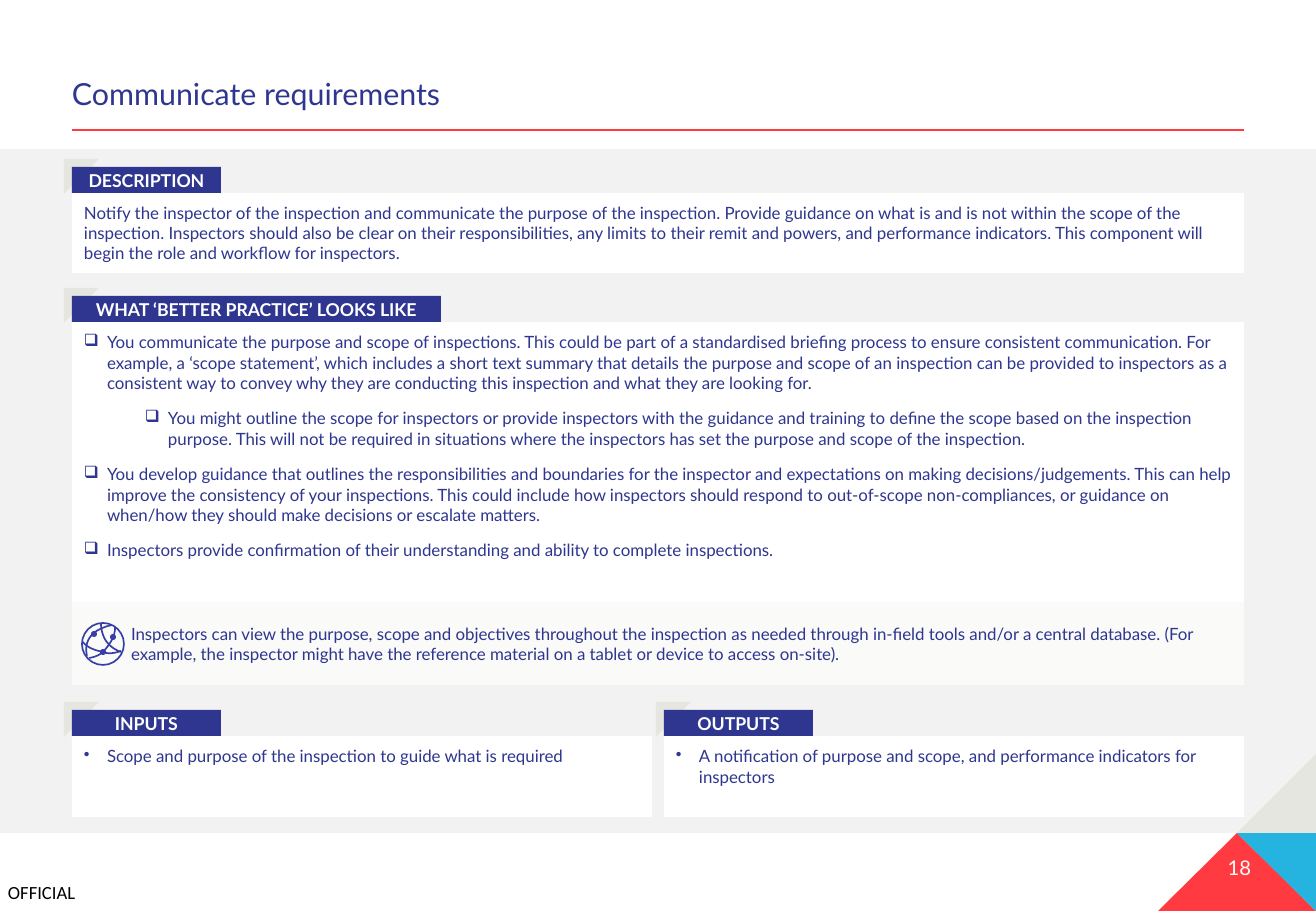
import pptx
import pptx.dml.color
import pptx.enum.shapes
import pptx.enum.text
import pptx.oxml.ns
import pptx.oxml.xmlchemy
import pptx.util

PX = 7526
NAVY, WHITE, RED, SAND = "2E368F", "FFFFFF", "FF3A40", "E6E6E1"
ICON = "363FA7"
tint = pptx.dml.color.RGBColor.from_string
element = pptx.oxml.xmlchemy.OxmlElement
Kind = pptx.enum.shapes.MSO_SHAPE
Side = pptx.enum.text.PP_ALIGN
Anchor = pptx.enum.text.MSO_ANCHOR

deck = pptx.Presentation()
deck.slide_width, deck.slide_height = 1316 * PX, 911 * PX
slide = deck.slides.add_slide(deck.slide_layouts[5])
shapes = slide.shapes


def block(kind, place, hue):
    """Add a filled shape without line or shadow; place is in px."""
    shape = shapes.add_shape(kind, *[v * PX for v in place])
    shape.shadow.inherit = False
    shape.fill.solid()
    shape.fill.fore_color.rgb = tint(hue)
    shape.line.fill.background()
    return shape


def write(shape, rows, inset=(12, 6), anchor=Anchor.TOP, align=Side.LEFT,
          before=0, after=0, **font):
    """Fill a shape with rows of (text, bullet, left px, indent px)."""
    frame = shape.text_frame
    frame.word_wrap = True
    side, top = (v * PX for v in inset)
    layout = {"margin_left": side, "margin_right": side, "margin_top": top,
              "margin_bottom": top, "vertical_anchor": anchor}
    for key, value in layout.items():
        setattr(frame, key, value)
    look = {"name": "Lato", "size": 10, "bold": False, "hue": NAVY} | font
    for i, (text, mark, left, indent) in enumerate(rows):
        para = frame.add_paragraph() if i else frame.paragraphs[0]
        props = para._p.get_or_add_pPr()
        props.set("marL", str(left * PX))
        props.set("indent", str(indent * PX))
        if mark:
            bullet = element("a:buChar")
            bullet.set("char", mark)
            props.append(bullet)
        para.alignment = align
        para.space_before = pptx.util.Pt(before if i else 0)
        para.space_after = pptx.util.Pt(after)
        run = para.add_run()
        run.text = text
        run.font.name, run.font.bold = look["name"], look["bold"]
        run.font.size = pptx.util.Pt(look["size"])
        run.font.color.rgb = tint(look["hue"])


# Page frame
block(Kind.RECTANGLE, (0, 149, 1316, 684), "F2F2F2")
corner = [
    (RED, [(1237, 833), (1158, 911), (1316, 911)]),
    ("25B3E0", [(1316, 833), (1237, 833), (1316, 911)]),
    (SAND, [(1316, 754), (1237, 833), (1316, 833)]),
]
for hue, points in corner:
    start, *rest = [(x * PX, y * PX) for x, y in points]
    path = shapes.build_freeform(*start)
    path.add_line_segments(rest)
    wedge = path.convert_to_shape()
    wedge.shadow.inherit = False
    wedge.fill.solid()
    wedge.fill.fore_color.rgb = tint(hue)
    wedge.line.fill.background()

mark = shapes.add_textbox(8 * PX, 881 * PX, 80 * PX, 22 * PX)
write(mark, [("OFFICIAL", "", 0, 0)], (0, 0), name="Calibri", size=11, hue="000000")
number = shapes.add_textbox(1146 * PX, 849 * PX, 105 * PX, 36 * PX)
write(number, [("18", "", 0, 0)], (0, 6), align=Side.RIGHT, size=12, hue=WHITE)

rule = shapes.add_connector(pptx.enum.shapes.MSO_CONNECTOR.STRAIGHT,
                            72 * PX, 130 * PX, 1244 * PX, 130 * PX)
rule.line.color.rgb = tint(RED)
rule.line.width = pptx.util.Pt(1.25)
rule._element.find(pptx.oxml.ns.qn("p:spPr")).append(element("a:effectLst"))

title = shapes.title
for key, value in {"left": 72, "top": 72, "width": 1172, "height": 46}.items():
    setattr(title, key, value * PX)
write(title, [("Communicate requirements", "", 0, 0)], (0, 6), Anchor.BOTTOM, size=18)
title.text_frame.paragraphs[0].line_spacing = 0.9

# Sections: label, left, top, label width, body width, body height, body format, rows
about = [(
    "Notify the inspector of the inspection and communicate the purpose of the inspection. "
    "Provide guidance on what is and is not within the scope of the inspection. Inspectors "
    "should also be clear on their responsibilities, any limits to their remit and powers, "
    "and performance indicators. This component will begin the role and workflow for "
    "inspectors.", "", 0, 0)]
better = [
    ("You communicate the purpose and scope of inspections. This could be part of a "
     "standardised briefing process to ensure consistent communication. For example, a "
     "‘scope statement’, which includes a short text summary that details the purpose and "
     "scope of an inspection can be provided to inspectors as a consistent way to convey "
     "why they are conducting this inspection and what they are looking for.", "❑", 23, -23),
    ("You might outline the scope for inspectors or provide inspectors with the guidance "
     "and training to define the scope based on the inspection purpose. This will not be "
     "required in situations where the inspectors has set the purpose and scope of the "
     "inspection.", "❑", 84, -23),
    ("You develop guidance that outlines the responsibilities and boundaries for the "
     "inspector and expectations on making decisions/judgements. This can help improve the "
     "consistency of your inspections. This could include how inspectors should respond to "
     "out-of-scope non-compliances, or guidance on when/how they should make decisions or "
     "escalate matters.", "❑", 23, -23),
    ("Inspectors provide confirmation of their understanding and ability to complete "
     "inspections.", "❑", 23, -23),
]
inputs = [("Scope and purpose of the inspection to guide what is required", "•", 23, -23)]
outputs = [("A notification of purpose and scope, and performance indicators for inspectors",
            "•", 23, -23)]
middle = {"anchor": Anchor.MIDDLE}
roomy = {"inset": (12, 10)}
parts = [
    ("DESCRIPTION", 72, 167, 149, 1172, 80, middle, about),
    ("WHAT ‘BETTER PRACTICE’ LOOKS LIKE", 72, 296, 369, 1172, 363, roomy, better),
    ("INPUTS", 72, 710, 149, 580, 81, roomy, inputs),
    ("OUTPUTS", 664, 710, 149, 580, 81, roomy, outputs),
]
for label, left, top, wide, span, tall, form, rows in parts:
    body = block(Kind.RECTANGLE, (left, top + 26, span, tall), WHITE)
    write(body, rows, before=6, after=3, **form)
    angle = block(Kind.HALF_FRAME, (left - 8, top - 8, 35, 35), SAND)
    for i in range(2):
        angle.adjustments[i] = 0.24
    tab = block(Kind.RECTANGLE, (left, top, wide, 26), NAVY)
    write(tab, [(label, "", 0, 0)], anchor=Anchor.MIDDLE, align=Side.CENTER,
          size=10.5, bold=True, hue=WHITE)

note = block(Kind.RECTANGLE, (72, 602, 1172, 83), "FAFAF9")
write(note, [(
    "Inspectors can view the purpose, scope and objectives throughout the inspection as "
    "needed through in-field tools and/or a central database. (For example, the inspector "
    "might have the reference material on a tablet or device to access on-site).",
    "", 47, 0)], (12, 10), Anchor.MIDDLE, after=3)

# Network globe: ring, curved links, nodes
ring = block(Kind.OVAL, (82, 623, 42, 42), WHITE)
ring.fill.background()
links = [
    [(87, 656), (82, 632), (112, 625)],
    [(101, 624), (102, 645), (121, 652)],
    [(115, 627), (116, 638), (103, 652)],
    [(89, 658), (97, 657), (103, 652)],
    [(103, 652), (110, 655), (121, 651)],
    [(83, 642), (88, 649), (103, 652)],
]
strokes = [ring]
for link in links:
    curve = []
    for t in [n / 10 for n in range(11)]:
        share = ((1 - t) ** 2, 2 * t * (1 - t), t ** 2)
        curve.append([sum(s * v for s, v in zip(share, axis)) * PX for axis in zip(*link)])
    path = shapes.build_freeform(*curve[0])
    path.add_line_segments(curve[1:], close=False)
    arc = path.convert_to_shape()
    arc.shadow.inherit = False
    arc.fill.background()
    strokes.append(arc)
for stroke in strokes:
    stroke.line.color.rgb = tint(ICON)
    stroke.line.width = pptx.util.Pt(1)
for x, y in [(94, 634), (113, 637), (103, 652)]:
    block(Kind.OVAL, (x - 3, y - 3, 6, 6), ICON)

deck.save("out.pptx")
